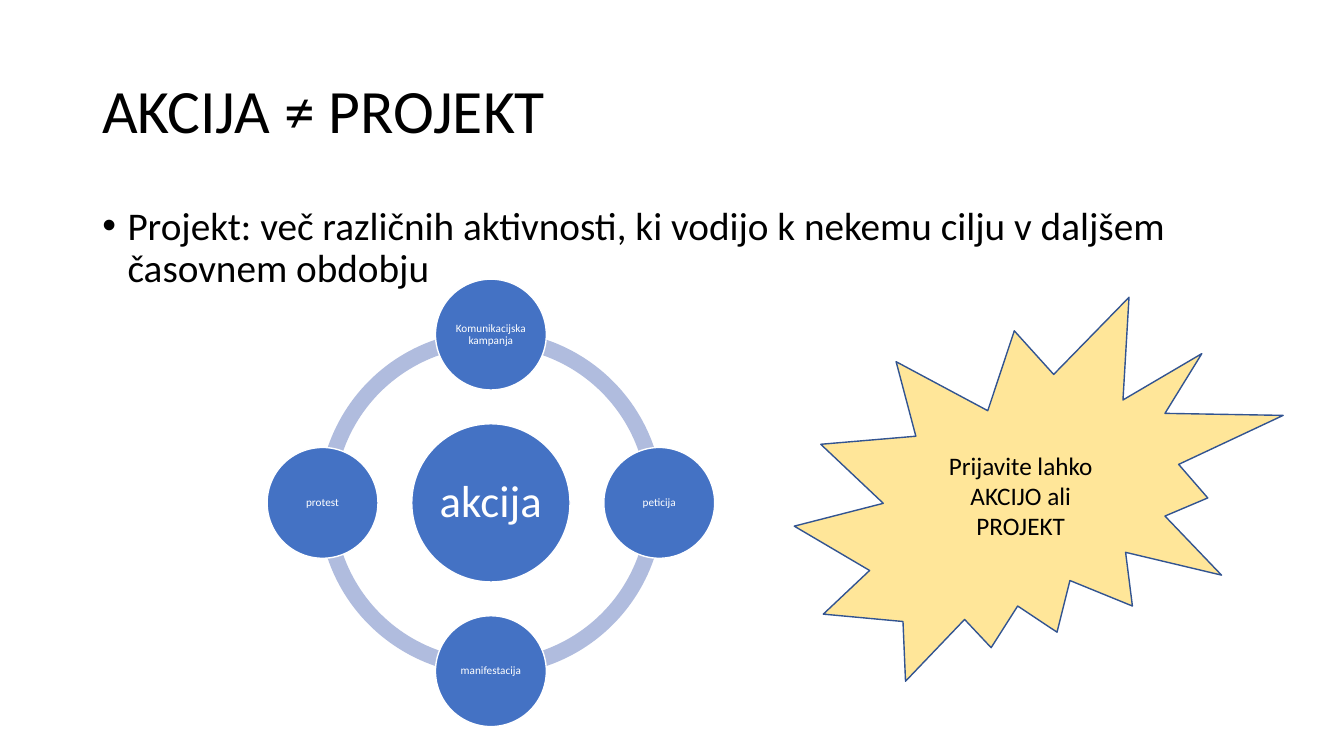
from math import cos, pi, sin

from lxml.etree import SubElement
from pptx import Presentation
from pptx.dml.color import RGBColor
from pptx.enum.shapes import MSO_SHAPE
from pptx.enum.text import MSO_ANCHOR, PP_ALIGN
from pptx.oxml.ns import qn
from pptx.util import Inches, Pt

WIDTH, HEIGHT = 13.33, 7.5
COLUMNS = 160
CENTER = (58.44, 59.88)
ORBIT, RING, HUB, NODE = 20.04, 41.04, 18.84, 13.2
BLUE, PALE_BLUE, NAVY = "4472C4", "B0BCDE", "325491"
YELLOW, WHITE, BLACK = "FFE699", "FFFFFF", "000000"
ACTIVITIES = ["Komunikacijska kampanja", "peticija", "manifestacija", "protest"]


def grid(count):
    """Return the length of a number of square grid cells."""
    return Inches(count * WIDTH / COLUMNS)


def color(hex_code):
    """Return a colour for a hex string."""
    return RGBColor.from_string(hex_code)


def write(shape, text, size, ink=BLACK, align=PP_ALIGN.CENTER,
          anchor=MSO_ANCHOR.MIDDLE, spacing=0.9, inset=None):
    """Fill a shape with one formatted paragraph and return it."""
    frame = shape.text_frame
    frame.word_wrap = True
    frame.vertical_anchor = anchor
    if inset is not None:
        frame.margin_left = frame.margin_right = Inches(inset)
        frame.margin_top = frame.margin_bottom = Inches(inset)
    paragraph = frame.paragraphs[0]
    paragraph.alignment = align
    paragraph.line_spacing = spacing
    run = paragraph.add_run()
    run.text = text
    run.font.name = "Calibri"
    run.font.size = Pt(size)
    run.font.color.rgb = color(ink)
    return paragraph


def add_textbox(slide, box, text, size, **style):
    """Add left-aligned text in a grid box and return its paragraph."""
    textbox = slide.shapes.add_textbox(*map(grid, box))
    return write(textbox, text, size, align=PP_ALIGN.LEFT, **style)


def add_bullet(paragraph):
    """Give a paragraph a round bullet with a hanging indent."""
    properties = paragraph._p.get_or_add_pPr()
    properties.set("marL", str(Inches(0.25)))
    properties.set("indent", str(Inches(-0.25)))
    SubElement(properties, qn("a:buFont")).set("typeface", "Arial")
    SubElement(properties, qn("a:buChar")).set("char", "•")


def add_figure(slide, kind, box, fill, outline=None):
    """Add a flat preset shape in a grid box."""
    figure = slide.shapes.add_shape(kind, *map(grid, box))
    figure.shadow.inherit = False
    figure.fill.solid()
    figure.fill.fore_color.rgb = color(fill)
    if outline:
        figure.line.color.rgb = color(outline)
        figure.line.width = Pt(1)
    else:
        figure.line.fill.background()
    return figure


def centered(x, y, diameter):
    """Return the square grid box around a point."""
    return x - diameter / 2, y - diameter / 2, diameter, diameter


def add_circle(slide, x, y, diameter, text, size, inset):
    """Add a labelled blue circle around a point."""
    circle = add_figure(slide, MSO_SHAPE.OVAL, centered(x, y, diameter), BLUE, WHITE)
    write(circle, text, size, ink=WHITE, inset=inset)


def add_cycle(slide, hub, activities):
    """Add a ring of activities around a hub."""
    x, y = CENTER
    count = len(activities)
    full_turn = 216
    for index in range(count):
        arc = add_figure(slide, MSO_SHAPE.BLOCK_ARC, centered(x, y, RING), PALE_BLUE)
        arc.adjustments[0] = index * full_turn / count
        arc.adjustments[1] = (index + 1) % count * full_turn / count
        arc.adjustments[2] = 0.046
    add_circle(slide, x, y, HUB, hub, 32, 0.04)
    for index, activity in enumerate(activities):
        angle = 2 * pi * index / count - pi / 2
        add_circle(slide, x + ORBIT * cos(angle), y + ORBIT * sin(angle),
                   NODE, activity, 8, 0.01)


def main():
    """Build and save the slide."""
    deck = Presentation()
    deck.slide_width, deck.slide_height = Inches(WIDTH), Inches(HEIGHT)
    slide = deck.slides.add_slide(deck.slide_layouts[6])
    add_textbox(slide, (11, 4.8, 138, 17.4), "AKCIJA ≠ PROJEKT", 44)
    goal = add_textbox(
        slide, (11, 24, 138, 57.12),
        "Projekt: več različnih aktivnosti, ki vodijo k nekemu cilju v daljšem časovnem obdobju",
        28, anchor=MSO_ANCHOR.TOP)
    goal.space_before = Pt(10)
    add_bullet(goal)
    add_cycle(slide, "akcija", ACTIVITIES)
    burst = add_figure(slide, MSO_SHAPE.EXPLOSION2, (94.56, 35.4, 58.2, 45.72), YELLOW, NAVY)
    write(burst, "Prijavite lahko AKCIJO ali PROJEKT", 18, spacing=1.0)
    deck.save("out.pptx")


if __name__ == "__main__":
    main()
